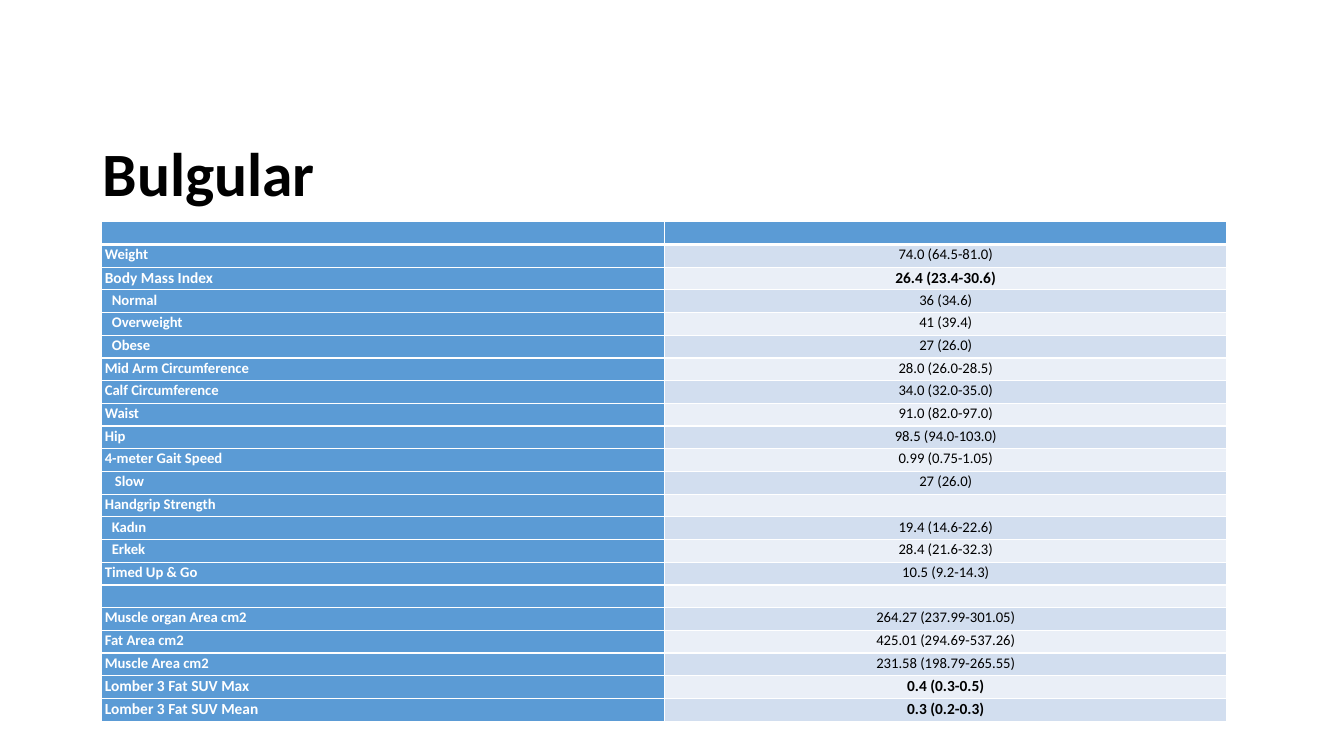
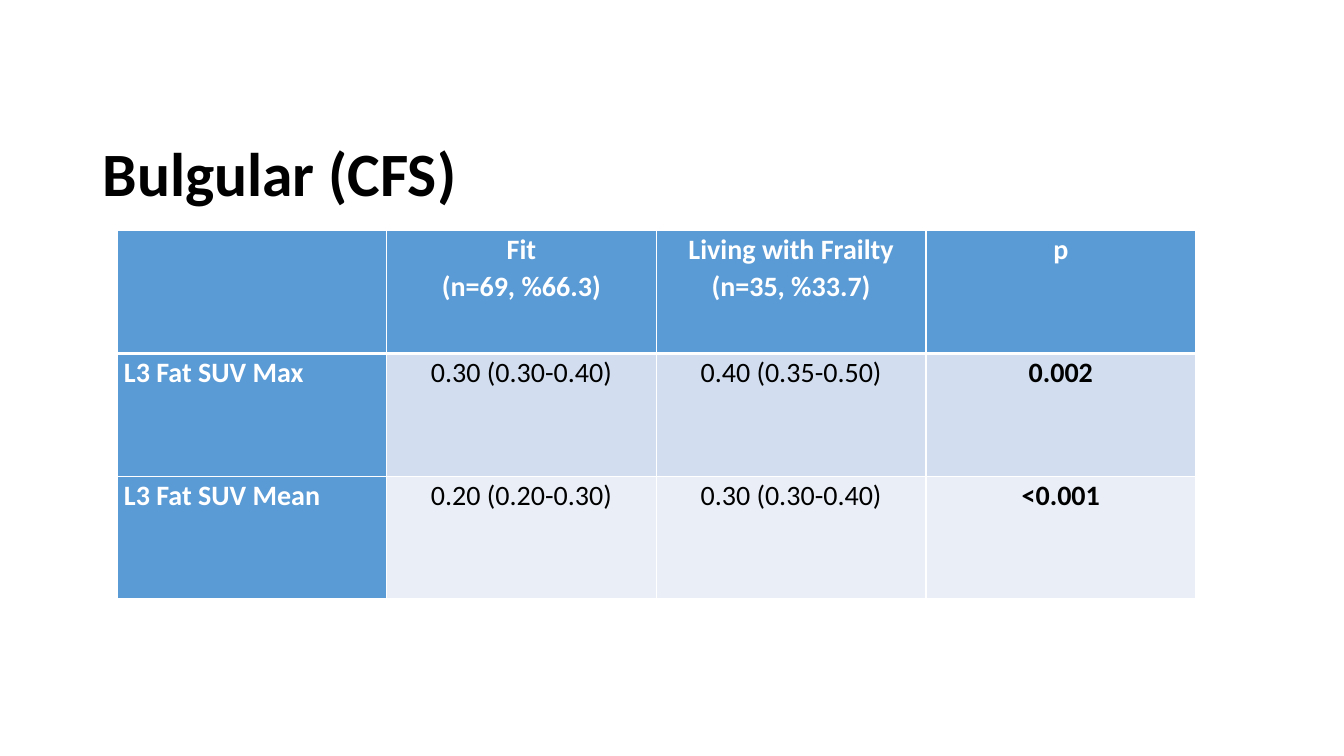
from lxml.etree import SubElement
from pptx import Presentation
from pptx.dml.color import RGBColor
from pptx.enum.text import MSO_ANCHOR as Anchor, PP_ALIGN as Align
from pptx.oxml.ns import qn
from pptx.util import Inches, Pt

BLACK = RGBColor(0x00, 0x00, 0x00)
WHITE = RGBColor(0xFF, 0xFF, 0xFF)
BLUE = RGBColor(0x5B, 0x9B, 0xD5)
BANDS = (RGBColor(0xEA, 0xEF, 0xF7), RGBColor(0xD2, 0xDE, 0xEF))

MEASUREMENTS = [
    ("", ""),
    ("Weight", "74.0 (64.5-81.0)"),
    ("Body Mass Index", "26.4 (23.4-30.6)"),
    ("Normal", "36 (34.6)"),
    ("Overweight", "41 (39.4)"),
    ("Obese", "27 (26.0)"),
    ("Mid Arm Circumference", "28.0 (26.0-28.5)"),
    ("Calf Circumference", "34.0 (32.0-35.0)"),
    ("Waist", "91.0 (82.0-97.0)"),
    ("Hip", "98.5 (94.0-103.0)"),
    ("4-meter Gait Speed", "0.99 (0.75-1.05)"),
    ("Slow", "27 (26.0)"),
    ("Handgrip Strength", ""),
    ("Kadın", "19.4 (14.6-22.6)"),
    ("Erkek", "28.4 (21.6-32.3)"),
    ("Timed Up & Go", "10.5 (9.2-14.3)"),
    ("", ""),
    ("Muscle organ Area cm2", "264.27 (237.99-301.05)"),
    ("Fat Area cm2", "425.01 (294.69-537.26)"),
    ("Muscle Area cm2", "231.58 (198.79-265.55)"),
    ("Lomber 3 Fat SUV Max", "0.4 (0.3-0.5)"),
    ("Lomber 3 Fat SUV Mean", "0.3 (0.2-0.3)"),
]
KEY_ROWS = {2, 20, 21}
INDENTS = {"Normal": 0.07, "Overweight": 0.07, "Obese": 0.07,
           "Slow": 0.1, "Kadın": 0.07, "Erkek": 0.07}

FRAILTY = [
    ("", "Fit\n(n=69, %66.3)", "Living with Frailty (n=35, %33.7)", "p"),
    ("L3 Fat SUV Max", "0.30 (0.30-0.40)", "0.40 (0.35-0.50)", "0.002"),
    ("L3 Fat SUV Mean", "0.20 (0.20-0.30)", "0.30 (0.30-0.40)", "<0.001"),
]
P_COLUMN = 3


def apply(target, values):
    for name, value in values.items():
        setattr(target, name, value)


class Deck:
    font = "Calibri"

    def __init__(self):
        self.prs = Presentation()
        apply(self.prs, {"slide_width": Inches(13.33), "slide_height": Inches(7.5)})

    def add_slide(self, heading):
        self.slide = self.prs.slides.add_slide(self.prs.slide_layouts[6])
        box = self.slide.shapes.add_textbox(
            Inches(0.92), Inches(1.3), Inches(11.5), Inches(0.9))
        frame = box.text_frame
        apply(frame, {"word_wrap": True, "vertical_anchor": Anchor.MIDDLE})
        self.fill_text(frame, heading, 44, BLACK, True, Align.LEFT, 0.9)

    def fill_text(self, frame, text, size, color, bold, align, spacing, indent=0):
        frame.text = text
        for paragraph in frame.paragraphs:
            apply(paragraph, {"alignment": align, "line_spacing": spacing})
            if indent:
                paragraph._p.get_or_add_pPr().set("marL", str(Inches(indent)))
            for run in paragraph.runs:
                apply(run.font, {"name": self.font, "size": Pt(size), "bold": bold})
                run.font.color.rgb = color
            if not text:
                SubElement(paragraph._p, qn("a:endParaRPr"), sz=str(int(size * 100)))

    def borders(self, cell, row):
        widths = {"L": 1, "R": 1, "T": 3 if row == 1 else 1, "B": 3 if row == 0 else 1}
        for side, width in widths.items():
            line = SubElement(cell._tc.get_or_add_tcPr(), qn(f"a:ln{side}"), w=str(Pt(width)))
            SubElement(SubElement(line, qn("a:solidFill")), qn("a:srgbClr"), val=str(WHITE))

    def table(self, rows, box, size, margin, key_rows=(), key_columns=(), key_size=None):
        left, top, width, height = map(Inches, box)
        columns = len(rows[0])
        grid = self.slide.shapes.add_table(len(rows), columns, left, top, width, height).table
        apply(grid, {"first_row": False, "horz_banding": False})
        for r, texts in enumerate(rows):
            for c, text in enumerate(texts):
                cell = grid.cell(r, c)
                apply(cell, {"margin_left": Inches(margin), "margin_right": Inches(margin),
                             "margin_top": 0, "margin_bottom": 0})
                self.borders(cell, r)
                heading = r == 0 or c == 0
                cell.fill.solid()
                cell.fill.fore_color.rgb = BLUE if heading else BANDS[r % 2]
                self.fill_text(cell.text_frame, text,
                               key_size if r in key_rows else size,
                               WHITE if heading else BLACK,
                               heading or r in key_rows or c in key_columns,
                               Align.CENTER if c else Align.LEFT, 1.07,
                               INDENTS.get(text, 0))


def main():
    deck = Deck()
    deck.add_slide("Bulgular")
    deck.table(MEASUREMENTS, (1.01, 2.2, 11.16, 4.96), 10.5, 0.03,
               key_rows=KEY_ROWS, key_size=11)
    deck.add_slide("Bulgular (CFS)")
    deck.table(FRAILTY, (1.16, 2.29, 10.7, 3.65), 20, 0.07, key_columns={P_COLUMN})
    deck.prs.save("out.pptx")


if __name__ == "__main__":
    main()
